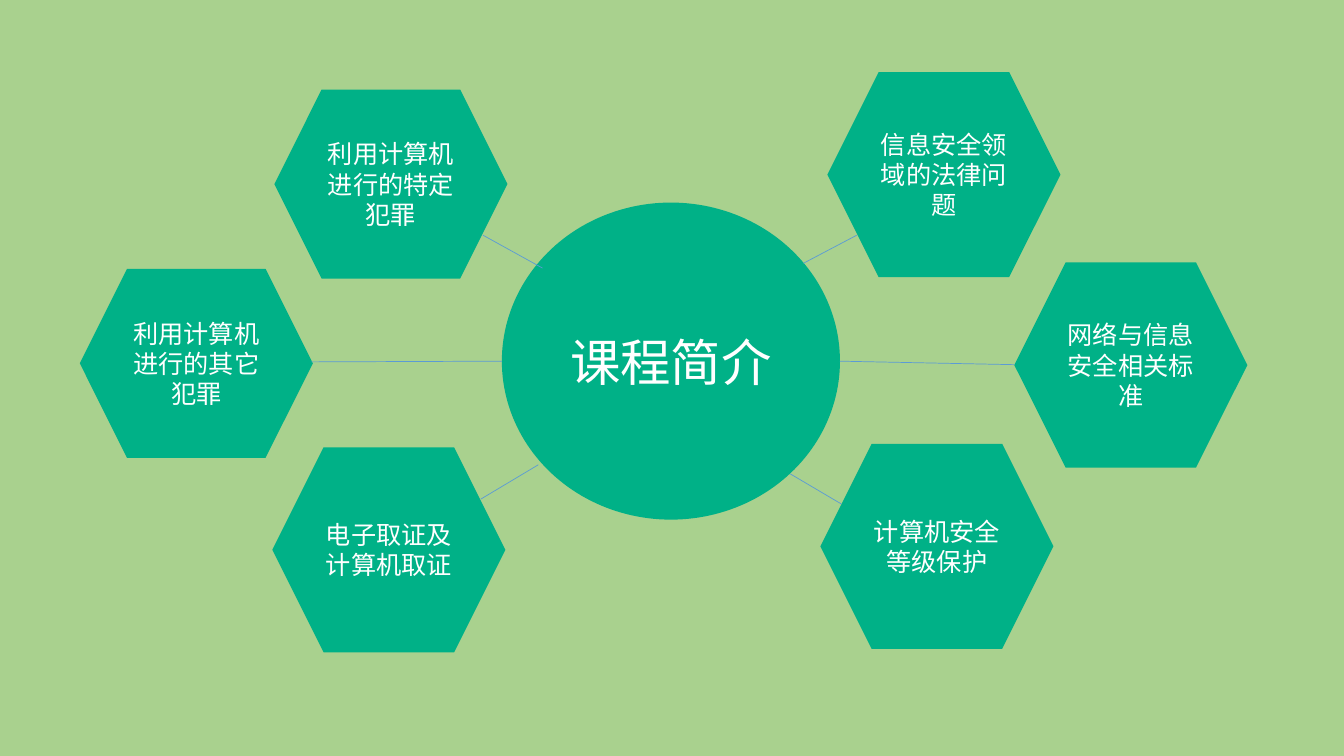
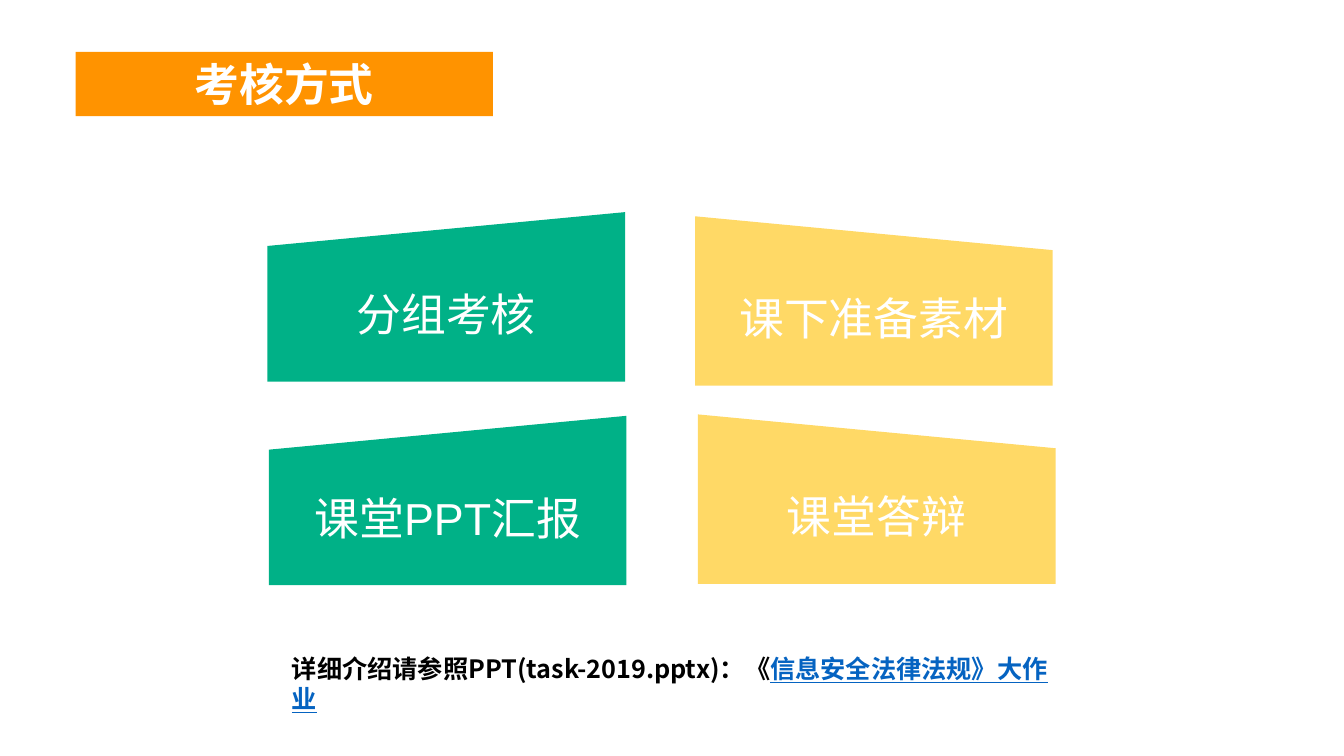
from pptx import Presentation
from pptx.util import Pt
from pptx.dml.color import RGBColor
from pptx.enum import shapes, text
from pptx.oxml import ns
from lxml import etree

GREEN = RGBColor(0x00, 0xB1, 0x87)
LIME = RGBColor(0xA9, 0xD1, 0x8E)
GOLD = RGBColor(0xFF, 0xD9, 0x66)
ORANGE = RGBColor(0xFF, 0x93, 0x00)
BLUE = RGBColor(0x5B, 0x9B, 0xD5)
LINK = RGBColor(0x05, 0x63, 0xC1)
WHITE = RGBColor(0xFF, 0xFF, 0xFF)
BLACK = RGBColor(0, 0, 0)
SANS = "Noto Sans CJK SC"
FRAME = {
    "word_wrap": True,
    "auto_size": text.MSO_AUTO_SIZE.NONE,
    "vertical_anchor": text.MSO_ANCHOR.MIDDLE,
}
LABEL = {"name": "Arial", "bold": False}
STRONG = {"name": SANS, "bold": True}


def write(para, words, size, color, style):
    run = para.add_run()
    run.text = words
    for key, value in {**style, "size": Pt(size)}.items():
        setattr(run.font, key, value)
    run.font.color.rgb = color
    props = run.font._element
    etree.SubElement(props, ns.qn("a:ea"), typeface=SANS)


def block(slide, kind, box, fill, words, size):
    shape = slide.shapes.add_shape(kind, *map(Pt, box))
    shape.shadow.inherit = False
    shape.fill.solid()
    shape.fill.fore_color.rgb = fill
    shape.line.fill.background()
    for key, value in FRAME.items():
        setattr(shape.text_frame, key, value)
    para = shape.text_frame.paragraphs[0]
    para.alignment = text.PP_ALIGN.CENTER
    write(para, words, size, WHITE, LABEL)
    return shape


deck = Presentation()
deck.slide_width, deck.slide_height = Pt(960), Pt(540)

map_page = deck.slides.add_slide(deck.slide_layouts[6])
map_page.background.fill.solid()
map_page.background.fill.fore_color.rgb = LIME
block(map_page, shapes.MSO_SHAPE.OVAL, (358.5, 144.7, 241.5, 226.5),
      GREEN, "课程简介", 36)

topics = [
    (196, 64, 135, "利用计算机进行的特定犯罪"),
    (591, 51.5, 146.5, "信息安全领域的法律问题"),
    (194.5, 319.5, 146.5, "电子取证及计算机取证"),
    (586, 317, 146.5, "计算机安全等级保护"),
    (57, 192, 135, "利用计算机进行的其它犯罪"),
    (724.5, 187.5, 146.5, "网络与信息安全相关标准"),
]
for left, top, high, words in topics:
    block(map_page, shapes.MSO_SHAPE.HEXAGON, (left, top, 166.5, high),
          GREEN, words, 18)

links = [
    (345, 168, 387.5, 191.5),
    (358.5, 258, 222, 258.5),
    (384.5, 332, 343.5, 356.5),
    (574, 188, 612, 168),
    (600, 258, 724.5, 260.5),
    (564.5, 338.5, 601, 360),
]
for ends in links:
    line = map_page.shapes.add_connector(
        shapes.MSO_CONNECTOR.STRAIGHT, *map(Pt, ends))
    line.line.color.rgb = BLUE
    line.line.width = Pt(0.5)
    etree.SubElement(line._element.spPr, ns.qn("a:effectLst"))

exam = deck.slides.add_slide(deck.slide_layouts[5])
title = exam.shapes.title
place = {"left": 54, "top": 37, "width": 298, "height": 46}
for key, value in place.items():
    setattr(title, key, Pt(value))
title.fill.solid()
title.fill.fore_color.rgb = ORANGE
for key, value in FRAME.items():
    setattr(title.text_frame, key, value)
head = title.text_frame.paragraphs[0]
head.alignment = text.PP_ALIGN.CENTER
write(head, "考核方式", 32, WHITE, STRONG)

cards = [
    (191, 151.5, GREEN, "分组考核"),
    (496.5, 154.5, GOLD, "课下准备素材"),
    (192, 297, GREEN, "课堂PPT汇报"),
    (498.5, 296, GOLD, "课堂答辩"),
]
for left, top, fill, words in cards:
    card = block(exam, shapes.MSO_SHAPE.FLOWCHART_MANUAL_INPUT,
                 (left, top, 255.5, 121), fill, words, 32)
    if fill == GOLD:
        card._element.spPr.xfrm.set("flipH", "1")

note = exam.shapes.add_textbox(*map(Pt, (201.5, 463, 569, 29)))
note.text_frame.word_wrap = True
para = note.text_frame.paragraphs[0]
write(para, "详细介绍请参照PPT(task-2019.pptx)：《", 18, BLACK, STRONG)
write(para, "信息安全法律法规》大作业", 18, LINK, {**STRONG, "underline": True})

deck.save("out.pptx")
